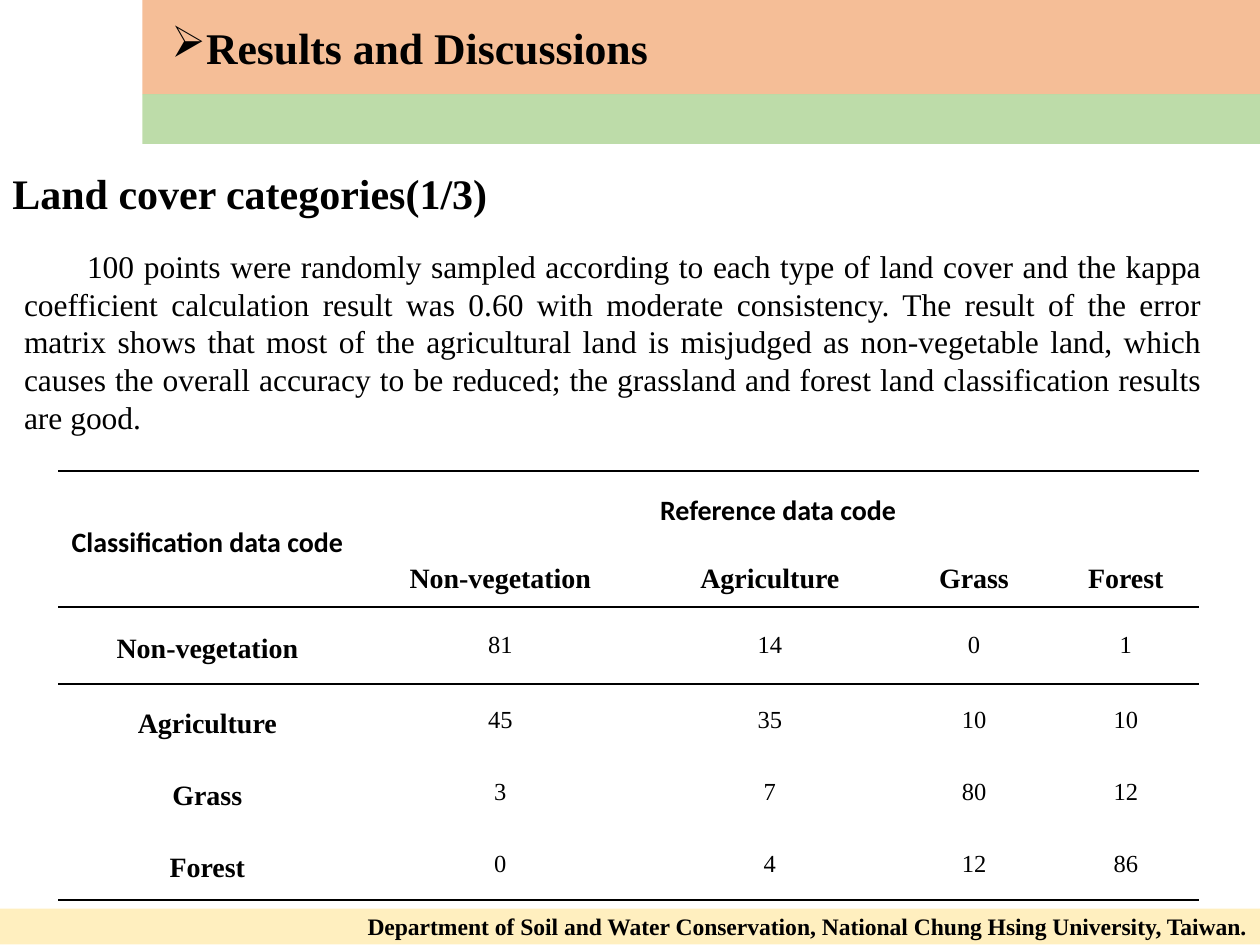
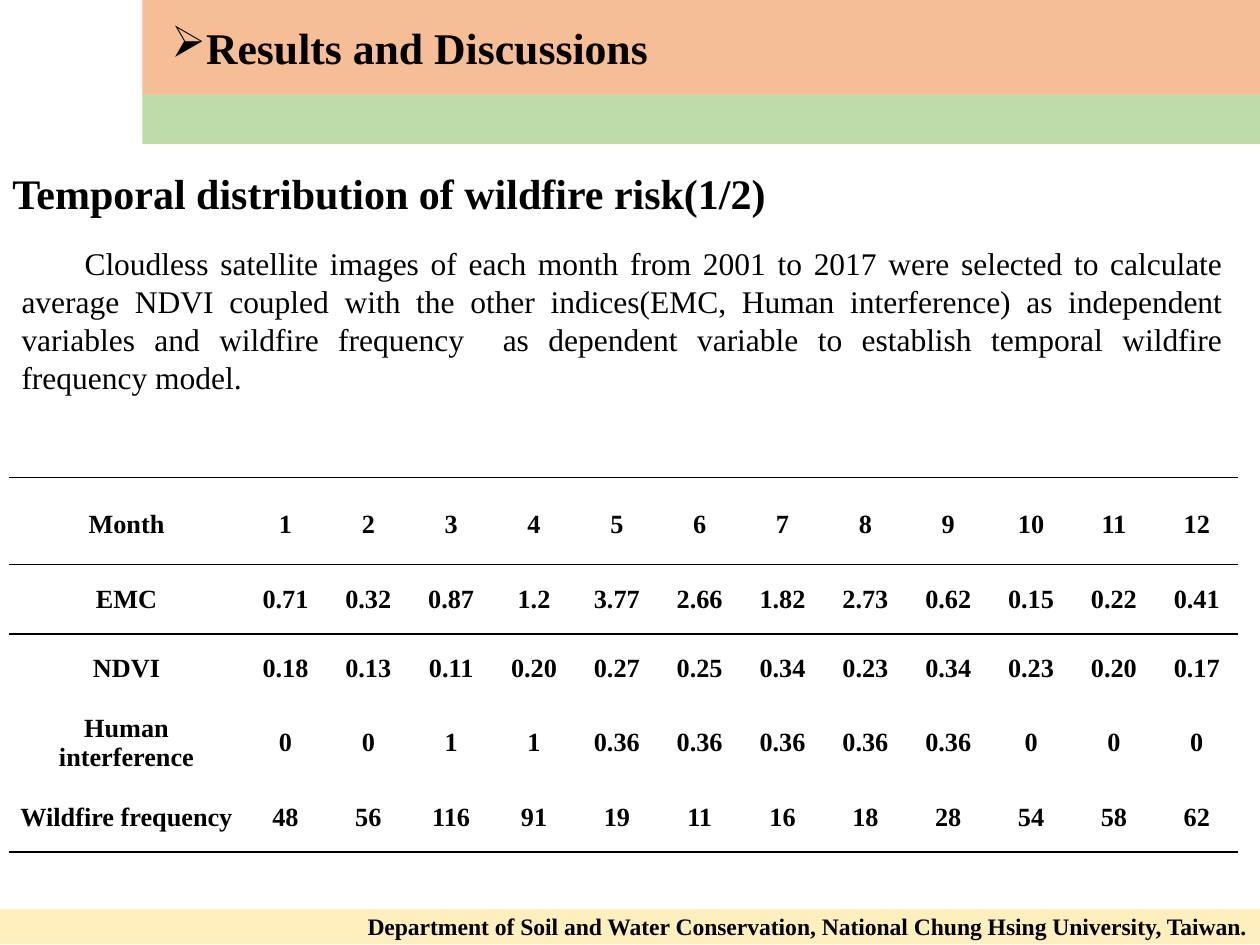
from dataclasses import dataclass

from lxml import etree
from pptx import Presentation
from pptx.dml.color import RGBColor
from pptx.enum.shapes import MSO_SHAPE
from pptx.enum.text import MSO_ANCHOR, MSO_AUTO_SIZE, PP_ALIGN
from pptx.oxml.ns import qn
from pptx.util import Cm, Pt

RECTANGLE = MSO_SHAPE.RECTANGLE
TOP, MIDDLE = MSO_ANCHOR.TOP, MSO_ANCHOR.MIDDLE
LEFT, CENTER, JUSTIFY = PP_ALIGN.LEFT, PP_ALIGN.CENTER, PP_ALIGN.JUSTIFY
NO_AUTOFIT = MSO_AUTO_SIZE.NONE
NO_TABLE_STYLE = "{2D5ABB26-0587-4C30-8999-92F81FD0307C}"


@dataclass(frozen=True)
class Theme:
    """Colours, fonts and type sizes shared by the slides."""

    ink: str = "000000"
    title_band: str = "F4B183"
    accent_band: str = "A9D18E"
    footer_band: str = "FFE699"
    serif: str = "Times New Roman"
    sans: str = "Calibri"
    title: float = 25
    heading: float = 24
    body: float = 18
    footer: float = 13.5
    matrix_label: float = 16
    matrix_value: float = 14
    monthly: float = 15
    rule: float = 1


THEME = Theme()
TITLE = "Results and Discussions"
FOOTER = "Department of Soil and Water Conservation, National Chung Hsing University, Taiwan."

COVER_HEADING = "Land cover categories(1/3)"
COVER_TEXT = (
    "100 points were randomly sampled according to each type of land cover and the kappa "
    "coefficient calculation result was 0.60 with moderate consistency. The result of the error "
    "matrix shows that most of the agricultural land is misjudged as non-vegetable land, which "
    "causes the overall accuracy to be reduced; the grassland and forest land classification "
    "results are good."
)
COVER_TYPES = ["Non-vegetation", "Agriculture", "Grass", "Forest"]
COVER_COUNTS = [[81, 14, 0, 1], [45, 35, 10, 10], [3, 7, 80, 12], [0, 4, 12, 86]]

RISK_HEADING = "Temporal distribution of wildfire risk(1/2)"
RISK_TEXT = (
    "Cloudless satellite images of each month from 2001 to 2017 were selected to calculate "
    "average NDVI coupled with the other indices(EMC, Human interference) as independent "
    "variables and wildfire frequency  as dependent variable to establish temporal wildfire "
    "frequency model."
)
RISK_ROWS = [
    ["Month", *range(1, 13)],
    ["EMC", "0.71", "0.32", "0.87", "1.2", "3.77", "2.66",
     "1.82", "2.73", "0.62", "0.15", "0.22", "0.41"],
    ["NDVI", "0.18", "0.13", "0.11", "0.20", "0.27", "0.25",
     "0.34", "0.23", "0.34", "0.23", "0.20", "0.17"],
    ["Human interference", 0, 0, 1, 1, *["0.36"] * 5, 0, 0, 0],
    ["Wildfire frequency", 48, 56, 116, 91, 19, 11, 16, 18, 28, 54, 58, 62],
]


def style_text(para, size, bold=False, font=THEME.serif, align=LEFT):
    """Format every run of a paragraph."""
    para.alignment = align
    for span in para.runs:
        span.font.name = font
        span.font.size = Pt(size)
        span.font.bold = bold
        span.font.color.rgb = RGBColor.from_string(THEME.ink)


def set_indent(para, margin, first_line, bullet=None):
    """Set the left margin, first-line indent and bullet of a paragraph."""
    properties = para._p.get_or_add_pPr()
    properties.set("marL", str(Cm(margin)))
    properties.set("indent", str(Cm(first_line)))
    if bullet:
        etree.SubElement(properties, qn("a:buChar")).set("char", bullet)
    else:
        etree.SubElement(properties, qn("a:buNone"))


def place(shape, box):
    """Move a shape to a box given in centimetres."""
    shape.left, shape.top, shape.width, shape.height = map(Cm, box)


def add_band(page, box, color, opacity):
    """Add a translucent band without outline."""
    band = page.shapes.add_shape(RECTANGLE, *map(Cm, box))
    band.shadow.inherit = False
    band.line.fill.background()
    band.fill.solid()
    band.fill.fore_color.rgb = RGBColor.from_string(color)
    for tint in band.element.iter(qn("a:srgbClr")):
        etree.SubElement(tint, qn("a:alpha")).set("val", str(opacity * 1000))
    return band


def add_text(page, box, text, size, wrap):
    """Add a bold line of text."""
    label = page.shapes.add_textbox(*map(Cm, box))
    label.text_frame.word_wrap = wrap
    label.text_frame.text = text
    style_text(label.text_frame.paragraphs[0], size, bold=True)
    return label


def dress_layout(page):
    """Build the bands and footer and hand them to the layout of the page."""
    footer = add_text(page, (7.16, 18.26, 18.24, 0.84), FOOTER, THEME.footer, True)
    footer.text_frame.margin_right = 0
    parts = [
        add_band(page, (2.87, 0, 22.53, 1.9), THEME.title_band, 83),
        add_band(page, (2.87, 1.9, 22.53, 1), THEME.accent_band, 76),
        add_band(page, (0, 18.32, 25.4, 0.72), THEME.footer_band, 62),
        footer,
    ]
    for number, part in enumerate(parts, start=20):
        next(part.element.iter(qn("p:cNvPr"))).set("id", str(number))
        page.slide_layout.shapes.element.append(part.element)


def fill_placeholder(holder, box, text):
    """Place a placeholder, set its text and return its paragraph."""
    place(holder, box)
    frame = holder.text_frame
    frame.text = text
    frame.auto_size = NO_AUTOFIT
    frame.vertical_anchor = TOP
    return frame.paragraphs[0]


def add_section(page, heading, text, heading_width, body_box):
    """Fill the title, section heading and justified body text."""
    title = fill_placeholder(page.shapes.title, (3.2, 0.3, 19.23, 1.32), TITLE)
    set_indent(title, 0.58, -0.58, "➢")
    style_text(title, THEME.title, bold=True)

    add_text(page, (0, 3.25, heading_width, 1.27), heading, THEME.heading, False)

    body = fill_placeholder(page.placeholders[1], body_box, text)
    set_indent(body, 0, 1.27)
    body.space_before = Pt(0)
    style_text(body, THEME.body, align=JUSTIFY)


def add_rule(cell, edges):
    """Draw black rules on the named edges of a cell."""
    properties = cell._tc.get_or_add_tcPr()
    for position, edge in enumerate(edges):
        line = etree.Element(qn(f"a:ln{edge}"), w=str(Pt(THEME.rule)))
        fill = etree.SubElement(line, qn("a:solidFill"))
        etree.SubElement(fill, qn("a:srgbClr")).set("val", THEME.ink)
        properties.insert(position, line)


def add_ruled_table(page, corner, widths, heights, head_rows):
    """Add an unfilled table with rules around its head and below its last row."""
    box = (*corner, sum(widths), sum(heights))
    frame = page.shapes.add_table(len(heights), len(widths), *map(Cm, box))
    for style in frame.element.iter(qn("a:tableStyleId")):
        style.text = NO_TABLE_STYLE
    table = frame.table
    table.first_row = table.horz_banding = False
    for column, width in zip(table.columns, widths):
        column.width = Cm(width)
    for index, (row, height) in enumerate(zip(table.rows, heights)):
        row.height = Cm(height)
        edges = "T" if index in (0, head_rows) else ""
        edges += "B" if index in (head_rows - 1, len(heights) - 1) else ""
        for cell in row.cells:
            cell.fill.background()
            cell.vertical_anchor = MIDDLE
            cell.margin_left = cell.margin_right = Cm(0.18)
            cell.margin_top = cell.margin_bottom = 0
            add_rule(cell, edges)
    return table


def write_cell(cell, value, size, bold=True, font=THEME.serif, spacing=None):
    """Write a centred value into a cell."""
    cell.text = str(value)
    para = cell.text_frame.paragraphs[0]
    if spacing:
        para.line_spacing = spacing
    style_text(para, size, bold, font, CENTER)


def add_error_matrix(page, corner):
    """Add the land cover error matrix."""
    widths = [6.02, 5.79, 5.08, 3.15, 2.97]
    heights = [1.45, 1.3, 1.55, 1.45, 1.45, 1.45]
    table = add_ruled_table(page, corner, widths, heights, head_rows=2)
    label = {"size": THEME.matrix_label, "spacing": 1.25}

    table.cell(0, 0).merge(table.cell(1, 0))
    table.cell(0, 1).merge(table.cell(0, 4))
    add_rule(table.cell(0, 0), "B")
    for column, text in enumerate(["Classification data code", "Reference data code"]):
        write_cell(table.cell(0, column), text, font=THEME.sans, **label)

    for index, (cover, counts) in enumerate(zip(COVER_TYPES, COVER_COUNTS)):
        write_cell(table.cell(1, index + 1), cover, **label)
        write_cell(table.cell(index + 2, 0), cover, **label)
        for column, count in enumerate(counts, start=1):
            write_cell(table.cell(index + 2, column), count, THEME.matrix_value, bold=False)


def add_monthly_table(page, corner):
    """Add the monthly indices and wildfire frequency."""
    widths = [4.74] + [1.67] * 12
    heights = [1.75, 1.4, 1.4, 1.6, 1.4]
    table = add_ruled_table(page, corner, widths, heights, head_rows=1)
    for row, values in enumerate(RISK_ROWS):
        for column, value in enumerate(values):
            spacing = None if row else 1.25
            write_cell(table.cell(row, column), value, THEME.monthly, spacing=spacing)


def main():
    """Build and save the deck."""
    deck = Presentation()
    deck.slide_width, deck.slide_height = Cm(25.4), Cm(19.05)
    layout = deck.slide_layouts[1]

    cover_page = deck.slides.add_slide(layout)
    dress_layout(cover_page)
    add_section(cover_page, COVER_HEADING, COVER_TEXT, 10.19, (0.23, 4.85, 24.26, 4.88))
    add_error_matrix(cover_page, (1.17, 9.49))

    risk_page = deck.slides.add_slide(layout)
    add_section(risk_page, RISK_HEADING, RISK_TEXT, 16.05, (0.18, 4.8, 24.74, 4.11))
    add_monthly_table(risk_page, (0.18, 9.63))

    deck.save("out.pptx")


if __name__ == "__main__":
    main()
